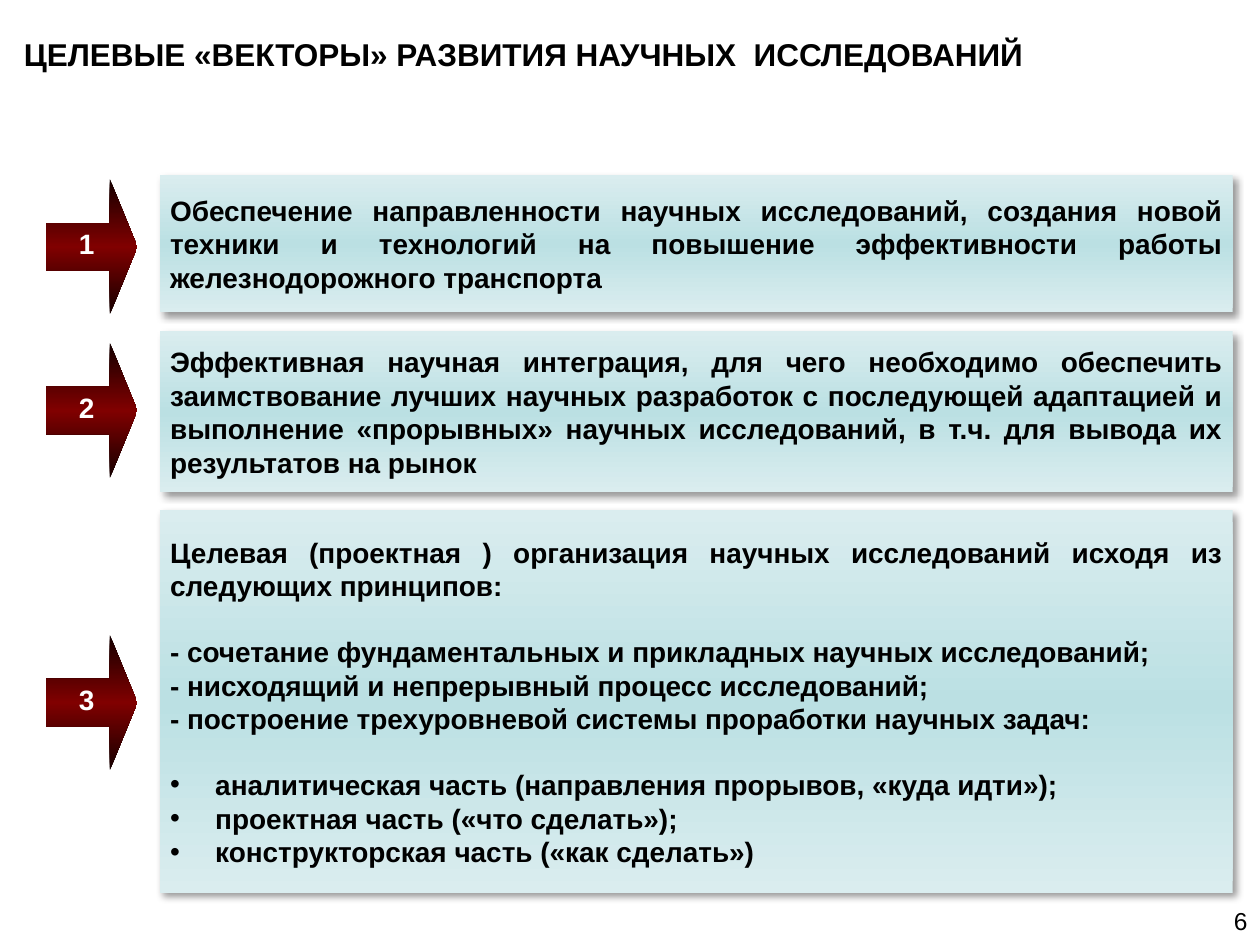
from copy import deepcopy

from lxml import etree
from pptx import Presentation
from pptx import util as u
from pptx.dml import color as clr
from pptx.enum import shapes, text
from pptx.oxml import ns

HUES = {
    "ink": "000000",
    "paper": "FFFFFF",
    "pale": "DAEDEF",
    "aqua": "BBE0E3",
    "dark": "150000",
    "red": "800000",
}
FACE = "Arial"
GAP = 18.4
LEFT, WIDE = 3.23, 21.62
GOALS = [
    (3.53, 2.77, 3.61, [
        ("Обеспечение направленности научных исследований, создания новой техники и технологий "
         "на повышение эффективности работы железнодорожного транспорта", 0, False),
    ]),
    (6.68, 3.25, 6.91, [
        ("Эффективная научная интеграция, для чего необходимо обеспечить заимствование лучших "
         "научных разработок с последующей адаптацией и выполнение «прорывных» научных "
         "исследований, в т.ч. для вывода их результатов на рынок", 0, False),
    ]),
    (10.29, 7.72, 12.8, [
        ("Целевая (проектная ) организация научных исследований исходя из следующих принципов:", 0, False),
        ("- сочетание фундаментальных и прикладных научных исследований;", GAP, False),
        ("- нисходящий и непрерывный процесс исследований;", 0, False),
        ("- построение трехуровневой системы проработки научных задач:", 0, False),
        ("аналитическая часть (направления прорывов, «куда идти»);", GAP, True),
        ("проектная часть («что сделать»);", 0, True),
        ("конструкторская часть («как сделать»)", 0, True),
    ]),
]


def tint(name):
    return clr.RGBColor.from_string(HUES[name])


def style(para, size, hue, bold, align):
    para.alignment = align
    font = para.font
    font.name, font.size, font.bold = FACE, u.Pt(size), bold
    font.color.rgb = tint(hue)


def inset(frame, side, edge):
    frame.margin_left = frame.margin_right = u.Cm(side)
    frame.margin_top = frame.margin_bottom = u.Cm(edge)
    frame.vertical_anchor = text.MSO_ANCHOR.MIDDLE


def blend(shape, rim, core):
    fill = shape.fill
    fill.gradient()
    fill.gradient_angle = 90
    stops = shape._element.spPr.find(".//" + ns.qn("a:gsLst"))
    stops.append(deepcopy(stops[0]))
    for stop, place, hue in zip(fill.gradient_stops, (0, 0.5, 1), (rim, core, rim)):
        stop.position = place
        stop.color.rgb = tint(hue)
    shape.line.fill.background()
    shape.shadow.inherit = False


def shade(shape):
    effects = shape._element.spPr.find(ns.qn("a:effectLst"))
    cast = etree.SubElement(effects, ns.qn("a:outerShdw"), blurRad="50800", dist="38100",
                            dir="2700000", algn="tl", rotWithShape="0")
    hue = etree.SubElement(cast, ns.qn("a:srgbClr"), val=HUES["ink"])
    etree.SubElement(hue, ns.qn("a:alpha"), val="40000")


def bullet(para):
    props = para._p.get_or_add_pPr()
    props.set("marL", str(u.Cm(0.91)))
    props.set("indent", str(-u.Cm(0.91)))
    etree.SubElement(props, ns.qn("a:buFont"), typeface=FACE)
    etree.SubElement(props, ns.qn("a:buChar"), char="•")


def add_panel(slide, top, high, lines):
    panel = slide.shapes.add_shape(shapes.MSO_SHAPE.RECTANGLE, u.Cm(LEFT), u.Cm(top),
                                   u.Cm(WIDE), u.Cm(high))
    blend(panel, "pale", "aqua")
    shade(panel)
    frame = panel.text_frame
    frame.word_wrap = True
    inset(frame, 0.2, 0.13)
    for count, (line, space, dot) in enumerate(lines):
        para = frame.add_paragraph() if count else frame.paragraphs[0]
        para.text = line
        if space:
            para.space_before = u.Pt(space)
        if dot:
            bullet(para)
        style(para, 16, "ink", True, text.PP_ALIGN.JUSTIFY)


def add_arrow(slide, top, label):
    arrow = slide.shapes.add_shape(shapes.MSO_SHAPE.RIGHT_ARROW, u.Cm(0.92), u.Cm(top),
                                   u.Cm(1.85), u.Cm(2.73))
    arrow.adjustments[0] = 0.35
    arrow.adjustments[1] = 0.3
    blend(arrow, "dark", "red")
    frame = arrow.text_frame
    frame.word_wrap = False
    inset(frame, 0.25, 0.13)
    para = frame.paragraphs[0]
    para.text = label
    para.line_spacing = 0.8
    style(para, 16, "paper", True, text.PP_ALIGN.CENTER)


def add_title(slide, words):
    title = slide.shapes.title
    title.left, title.top = u.Cm(0.48), u.Cm(0.28)
    title.width, title.height = u.Cm(20.57), u.Cm(1.6)
    title.fill.solid()
    title.fill.fore_color.rgb = tint("paper")
    frame = title.text_frame
    frame.text = words
    frame.auto_size = text.MSO_AUTO_SIZE.NONE
    inset(frame, 0, 0.13)
    style(frame.paragraphs[0], 18, "ink", True, text.PP_ALIGN.LEFT)


def add_page(slide, label):
    box = slide.shapes.add_textbox(u.Cm(24.49), u.Cm(18.14), u.Cm(0.91), u.Cm(0.9))
    box.text_frame.word_wrap = True
    para = box.text_frame.paragraphs[0]
    para.text = label
    style(para, 14, "ink", False, text.PP_ALIGN.RIGHT)


def main():
    deck = Presentation()
    deck.slide_width, deck.slide_height = u.Cm(25.4), u.Cm(19.05)
    slide = deck.slides.add_slide(deck.slide_layouts[5])
    add_title(slide, "ЦЕЛЕВЫЕ «ВЕКТОРЫ» РАЗВИТИЯ НАУЧНЫХ  ИССЛЕДОВАНИЙ")
    for count, (top, high, tip, lines) in enumerate(GOALS, 1):
        add_panel(slide, top, high, lines)
        add_arrow(slide, tip, str(count))
    add_page(slide, "6")
    deck.save("out.pptx")


if __name__ == "__main__":
    main()
